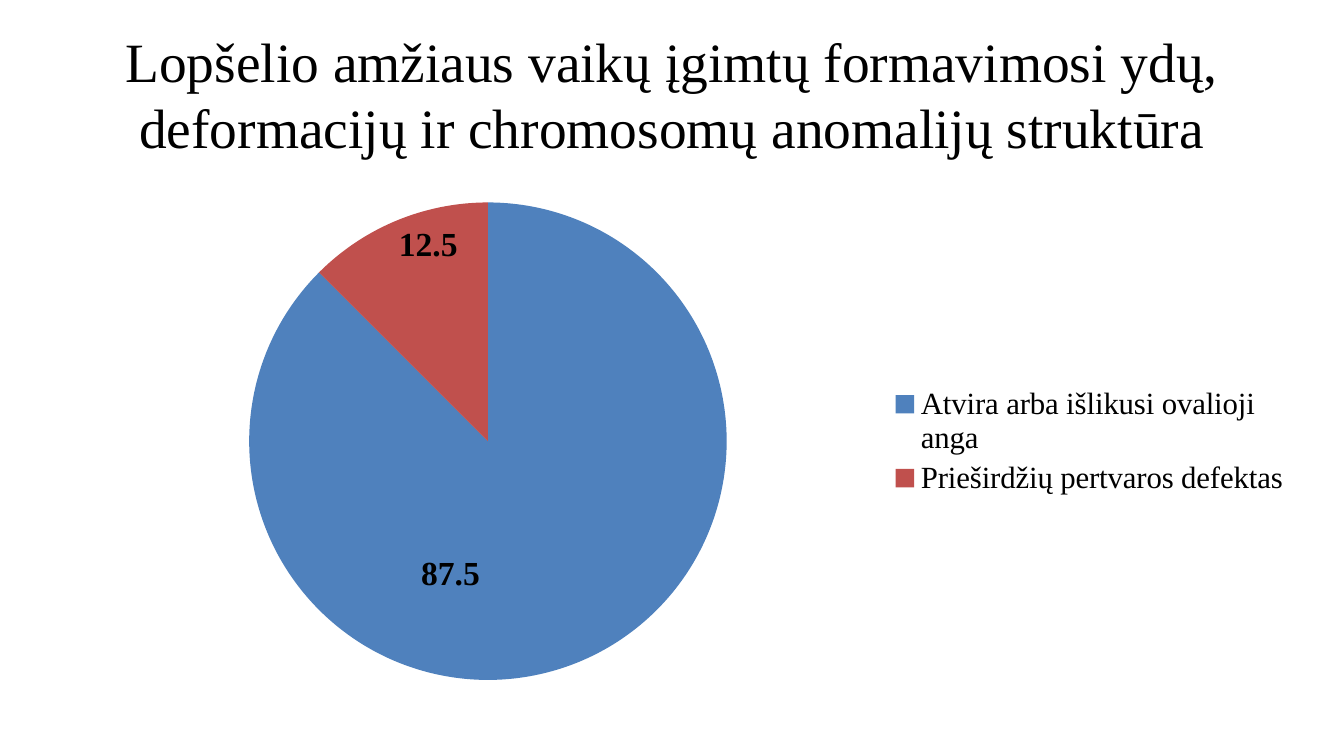
from lxml import etree
from pptx import Presentation
from pptx import util as u
from pptx.chart import data as chart_data
from pptx.dml.color import RGBColor
from pptx.enum import chart as charts, text
from pptx.oxml import ns

PX = 9525
COLOURS = {"ink": "000000", "open": "4F81BD", "defect": "C0504D"}
FONT = "Times New Roman"


class SlideBuilder:
    def __init__(self, deck, page):
        self.deck = deck
        self.page = page

    def colour(self, name):
        return RGBColor.from_string(COLOURS[name])

    def style(self, font, size, bold=False):
        font.color.rgb = self.colour("ink")
        values = {"name": FONT, "size": u.Pt(size), "bold": bold}
        for key, value in values.items():
            setattr(font, key, value)

    def place(self, box, *bounds):
        for key, value in zip(("left", "top", "width", "height"), bounds):
            setattr(box, key, value * PX)

    def title(self, words, bounds, size):
        box = self.page.shapes.title
        self.place(box, *bounds)
        frame = box.text_frame
        frame.text = words
        settings = {
            "word_wrap": True,
            "auto_size": text.MSO_AUTO_SIZE.NONE,
            "vertical_anchor": text.MSO_ANCHOR.MIDDLE,
        }
        for key, value in settings.items():
            setattr(frame, key, value)
        para = frame.paragraphs[0]
        para.alignment = text.PP_ALIGN.CENTER
        self.style(para.runs[0].font, size)

    def layout(self, parent, index, **values):
        """Set a manual layout, as fractions of the chart, at a child index."""
        for old in parent.findall(ns.qn("c:layout")):
            parent.remove(old)
        layout = etree.Element(ns.qn("c:layout"))
        manual = etree.SubElement(layout, ns.qn("c:manualLayout"))
        for key, value in values.items():
            etree.SubElement(manual, ns.qn(f"c:{key}")).set("val", str(value))
        parent.insert(index, layout)

    def pie(self, slices, bounds):
        data = chart_data.CategoryChartData()
        data.categories = [label for label, _, _ in slices]
        data.add_series("Series 1", [value for _, value, _ in slices])
        frame = self.page.shapes.add_chart(
            charts.XL_CHART_TYPE.PIE, *(length * PX for length in bounds), data)
        chart = frame.chart
        chart.has_title = False
        chart.font.name = "Calibri"
        chart.font.size = u.Pt(18)
        chart.font.color.rgb = self.colour("ink")
        plot = chart.plots[0]
        plot.vary_by_categories = True
        series = plot.series[0]
        for index, (_, _, colour) in enumerate(slices):
            fill = series.points[index].format.fill
            fill.solid()
            fill.fore_color.rgb = self.colour(colour)

        main_label = series.points[0].data_label
        labels = series.data_labels
        labels.show_value = True
        for label in (main_label, labels):
            self.style(label.font, 24, bold=True)
            label.position = charts.XL_LABEL_POSITION.INSIDE_END

        chart.has_legend = True
        legend = chart.legend
        legend.position = charts.XL_LEGEND_POSITION.RIGHT
        legend.include_in_layout = False
        self.style(legend.font, 22)

        find = chart.element.find
        edges = {"xMode": "edge", "yMode": "edge"}
        self.layout(find(".//" + ns.qn("c:plotArea")), 0, layoutTarget="inner",
                    **edges, x=0.13, y=0.08, w=0.4, h=0.83)
        self.layout(find(".//" + ns.qn("c:legend")), 1,
                    **edges, x=0.66, y=0.39, w=0.33, h=0.21)
        self.layout(find(".//" + ns.qn("c:dLbl")), 1, x=-0.08, y=-0.11)


def main():
    deck = Presentation()
    deck.slide_width = 1280 * PX
    deck.slide_height = 720 * PX
    builder = SlideBuilder(deck, deck.slides.add_slide(deck.slide_layouts[5]))
    builder.title(
        "Lopšelio amžiaus vaikų įgimtų formavimosi ydų, "
        "deformacijų ir chromosomų anomalijų struktūra",
        (64, 29, 1152, 120), 39.6)
    builder.pie([
        ("Atvira arba išlikusi ovalioji anga", 87.5, "open"),
        ("Prieširdžių pertvaros defektas", 12.5, "defect"),
    ], (83, 149, 1157, 548))
    deck.save("out.pptx")


if __name__ == "__main__":
    main()
